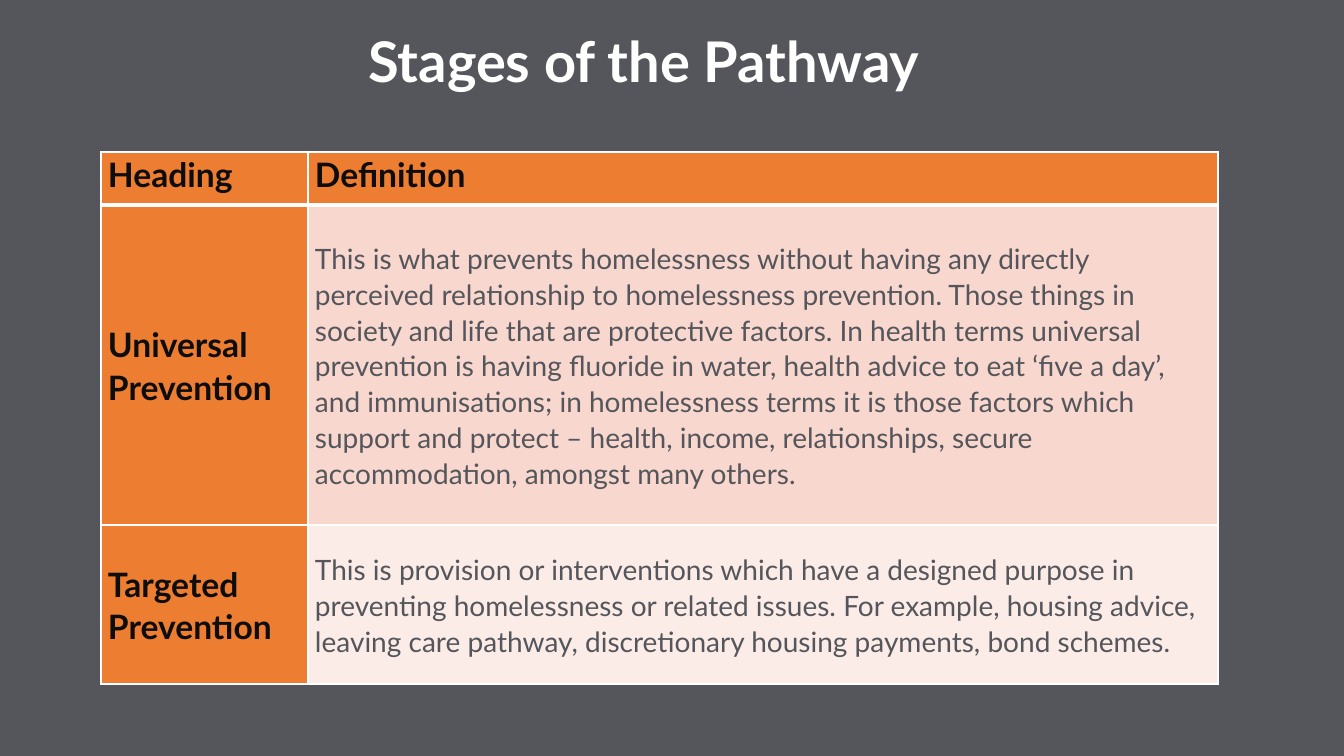
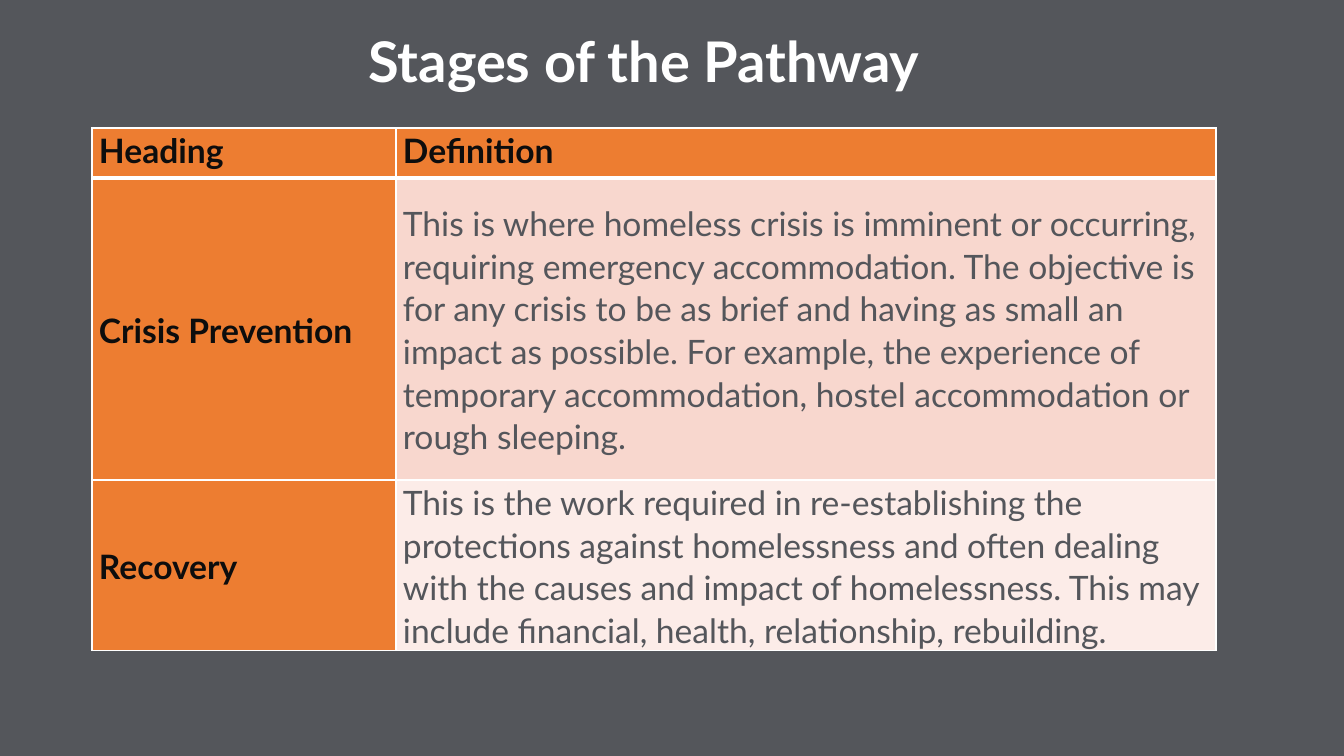
"""Build two slides that define the stages of the pathway."""
from lxml.etree import SubElement
from pptx import Presentation
from pptx.dml.color import RGBColor
from pptx.enum.text import MSO_ANCHOR as Anchor, PP_ALIGN as Align
from pptx.oxml.ns import qn
from pptx.util import Emu, Pt

TITLE = "Stages of the Pathway"
HEADS = ("Heading", "Definition")
SLIDES = [
    dict(at=(101, 152), cols=(207, 910), rows=(53, 320, 159), size=20, stages=[
        ("Universal Prevention",
         "This is what prevents homelessness without having any directly "
         "perceived relationship to homelessness prevention. Those things in "
         "society and life that are protective factors. In health terms "
         "universal prevention is having fluoride in water, health advice to "
         "eat ‘five a day’, and immunisations; in homelessness terms it is "
         "those factors which support and protect – health, income, "
         "relationships, secure accommodation, amongst many others."),
        ("Targeted Prevention",
         "This is provision or interventions which have a designed purpose in "
         "preventing homelessness or related issues. For example, housing "
         "advice, leaving care pathway, discretionary housing payments, bond "
         "schemes."),
    ]),
    dict(at=(92, 128), cols=(304, 820), rows=(50, 302, 171), size=24, stages=[
        ("Crisis Prevention",
         "This is where homeless crisis is imminent or occurring, requiring "
         "emergency accommodation. The objective is for any crisis to be as "
         "brief and having as small an impact as possible. For example, the "
         "experience of temporary accommodation, hostel accommodation or "
         "rough sleeping."),
        ("Recovery",
         "This is the work required in re-establishing the protections "
         "against homelessness and often dealing with the causes and impact "
         "of homelessness. This may include financial, health, relationship, "
         "rebuilding."),
    ]),
]
FONT = "Lato"
SLATE, WHITE, BLACK, ORANGE = "54565B", "FFFFFF", "0D0D0D", "ED7D31"
TINTS = ("F8D7CE", "FCECE8")
SCALE = 914400 / 100.8


def px(n):
    return Emu(round(n * SCALE))


def paint(fill, color):
    fill.solid()
    fill.fore_color.rgb = RGBColor.from_string(color)


def write(frame, text, size, color, bold, space):
    para = frame.paragraphs[0]
    para.text = text
    para.line_spacing = space
    font = para.font
    font.name, font.size, font.bold = FONT, Pt(size), bold
    font.color.rgb = RGBColor.from_string(color)
    return para


def edge(cell, side, width):
    line = SubElement(cell._tc.get_or_add_tcPr(), qn("a:ln" + side), w=str(Pt(width)))
    SubElement(SubElement(line, qn("a:solidFill")), qn("a:srgbClr"), val=WHITE)


def add_title(slide):
    frame = slide.shapes.add_textbox(*map(px, (155, 7, 978, 93))).text_frame
    frame.word_wrap = True
    frame.vertical_anchor = Anchor.BOTTOM
    write(frame, TITLE, 40, WHITE, True, 0.9).alignment = Align.CENTER


def add_stages(slide, at, cols, rows, size, stages):
    box = map(px, (*at, sum(cols), sum(rows)))
    table = slide.shapes.add_table(len(rows), len(cols), *box).table
    table.horz_banding = False
    for col, width in zip(table.columns, cols):
        col.width = px(width)
    for row, height in zip(table.rows, rows):
        row.height = px(height)
    for r, texts in enumerate([HEADS, *stages]):
        for c, text in enumerate(texts):
            cell = table.cell(r, c)
            label = r == 0 or c == 0
            cell.margin_left = cell.margin_right = px(7)
            cell.margin_top = cell.margin_bottom = 0
            cell.vertical_anchor = Anchor.MIDDLE if r else Anchor.TOP
            widths = dict(L=1, R=1, T=3 if r == 1 else 1, B=1 if r else 3)
            for side, width in widths.items():
                edge(cell, side, width)
            paint(cell.fill, ORANGE if label else TINTS[r - 1])
            write(cell.text_frame, text, 24 if label else size,
                  BLACK if label else SLATE, label, 1.06)


def main():
    deck = Presentation()
    deck.slide_width, deck.slide_height = px(1344), px(756)
    for stage in SLIDES:
        slide = deck.slides.add_slide(deck.slide_layouts[6])
        paint(slide.background.fill, SLATE)
        add_title(slide)
        add_stages(slide, **stage)
    deck.save("out.pptx")


if __name__ == "__main__":
    main()
